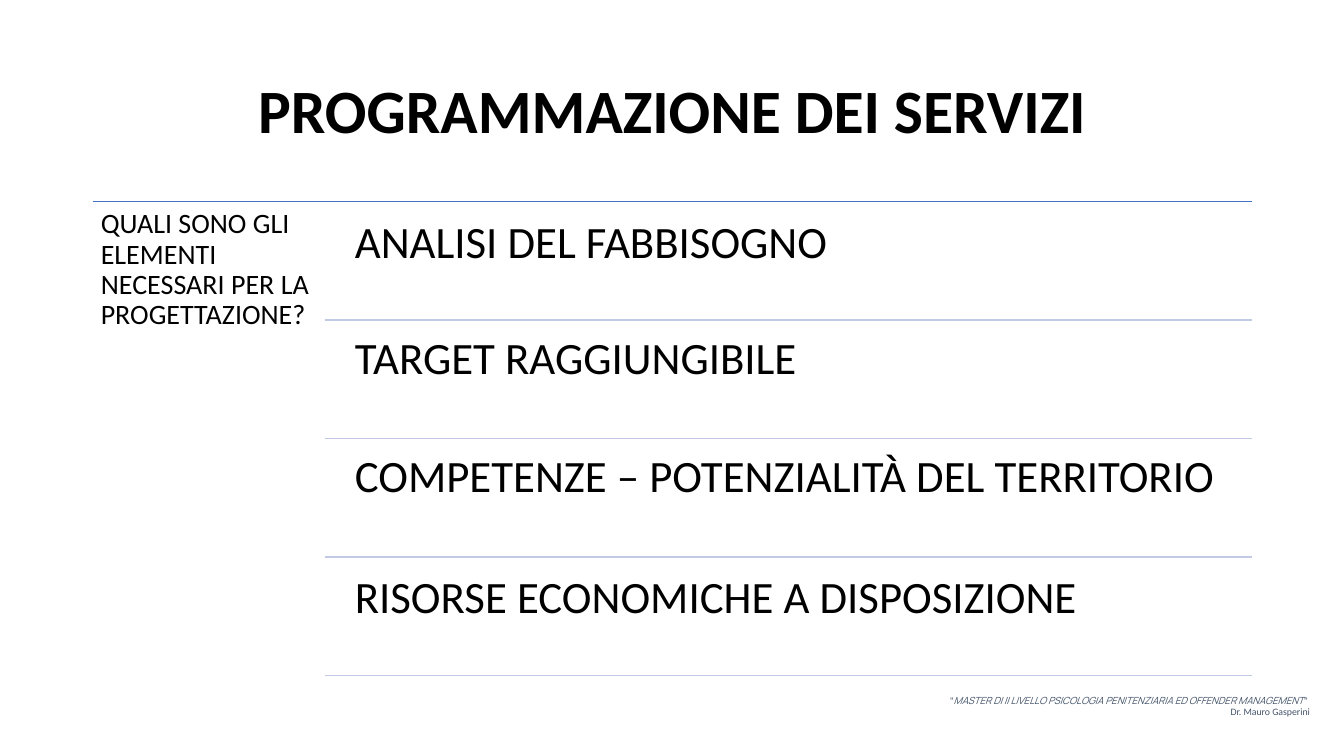
from lxml import etree
from pptx import Presentation
from pptx import util as u
from pptx.dml.color import RGBColor
from pptx.enum import shapes, text
from pptx.oxml.ns import qn

COLORS = {"text": "000000", "rule": "4472C4", "row_rule": "C1C9E4", "footer": "44546A"}
BODY_FONT, ACCENT_FONT = "Calibri", "Manrope"
SLIDE_WIDTH, SLIDE_HEIGHT = 13.33, 7.5
QUESTION_SHARE = 0.2  # share of the outline's width left of the rows
ROW_INDENT = 0.17
ELEMENTS = [  # label and its offset below the top of its row
    ("ANALISI DEL FABBISOGNO", 0.05),
    ("TARGET RAGGIUNGIBILE", 0.03),
    ("COMPETENZE – POTENZIALITÀ DEL TERRITORIO", 0.02),
    ("RISORSE ECONOMICHE A DISPOSIZIONE", 0.05),
]


def format_run(run, size, color, font=BODY_FONT, bold=False, italic=False):
    run.font.name = font
    run.font.size = u.Pt(size)
    run.font.bold = bold
    run.font.italic = italic
    run.font.color.rgb = RGBColor.from_string(COLORS[color])


def add_text_frame(slide, box, inset=None, anchor=text.MSO_ANCHOR.TOP):
    frame = slide.shapes.add_textbox(*map(u.Inches, box)).text_frame
    frame.word_wrap = True
    frame.vertical_anchor = anchor
    if inset is not None:
        frame.margin_left = frame.margin_right = u.Inches(inset)
        frame.margin_top = frame.margin_bottom = u.Inches(inset)
    return frame


def add_label(slide, box, label, size, inset=None, bold=False,
              anchor=text.MSO_ANCHOR.TOP, align=text.PP_ALIGN.LEFT):
    frame = add_text_frame(slide, box, inset, anchor)
    frame.text = label
    paragraph = frame.paragraphs[0]
    paragraph.alignment = align
    paragraph.line_spacing = 0.9
    format_run(paragraph.runs[0], size, "text", bold=bold)


def add_rule(slide, left, right, y, color):
    rule = slide.shapes.add_connector(
        shapes.MSO_CONNECTOR.STRAIGHT, *map(u.Inches, (left, y, right, y)))
    rule.line.color.rgb = RGBColor.from_string(COLORS[color])
    rule.line.width = u.Pt(1)
    etree.SubElement(rule._element.spPr, qn("a:effectLst"))


def add_title(slide, box):
    add_label(slide, box, "PROGRAMMAZIONE DEI SERVIZI", 44, bold=True,
              anchor=text.MSO_ANCHOR.MIDDLE, align=text.PP_ALIGN.CENTER)


def add_outline(slide, box):
    """Place the question on the left and the ruled rows of elements on the right."""
    left, top, width, height = box
    right = left + width
    rows_left = left + width * QUESTION_SHARE
    label_left = rows_left + ROW_INDENT
    row_height = height / len(ELEMENTS)

    add_rule(slide, left, right, top, "rule")
    add_label(slide, (left, top, rows_left - left, height),
              "QUALI SONO GLI ELEMENTI NECESSARI PER LA PROGETTAZIONE?", 20, inset=0.08)
    for row, (label, offset) in enumerate(ELEMENTS):
        row_top = top + row * row_height
        add_label(slide, (label_left, row_top + offset, right - label_left, 1.12),
                  label, 32, inset=0.13)
        add_rule(slide, rows_left, right, row_top + row_height, "row_rule")


def add_footer(slide, box):
    frame = add_text_frame(slide, box)
    course = "MASTER DI II LIVELLO PSICOLOGIA PENITENZIARIA ED OFFENDER MANAGEMENT"
    lines = [
        [('"', BODY_FONT), (course, ACCENT_FONT), ('" ', BODY_FONT)],
        [("Dr. Mauro Gasperini", BODY_FONT)],
    ]
    for index, pieces in enumerate(lines):
        paragraph = frame.add_paragraph() if index else frame.paragraphs[0]
        paragraph.alignment = text.PP_ALIGN.RIGHT
        for piece, font in pieces:
            run = paragraph.add_run()
            run.text = piece
            format_run(run, 7, "footer", font, italic=font == ACCENT_FONT)


def main():
    presentation = Presentation()
    presentation.slide_width = u.Inches(SLIDE_WIDTH)
    presentation.slide_height = u.Inches(SLIDE_HEIGHT)
    slide = presentation.slides.add_slide(presentation.slide_layouts[6])
    add_title(slide, (0.92, 0.4, 11.5, 1.45))
    add_outline(slide, (0.92, 2, 11.5, 4.7))
    add_footer(slide, (0.78, 6.84, 12.31, 0.4))
    presentation.save("out.pptx")


if __name__ == "__main__":
    main()
